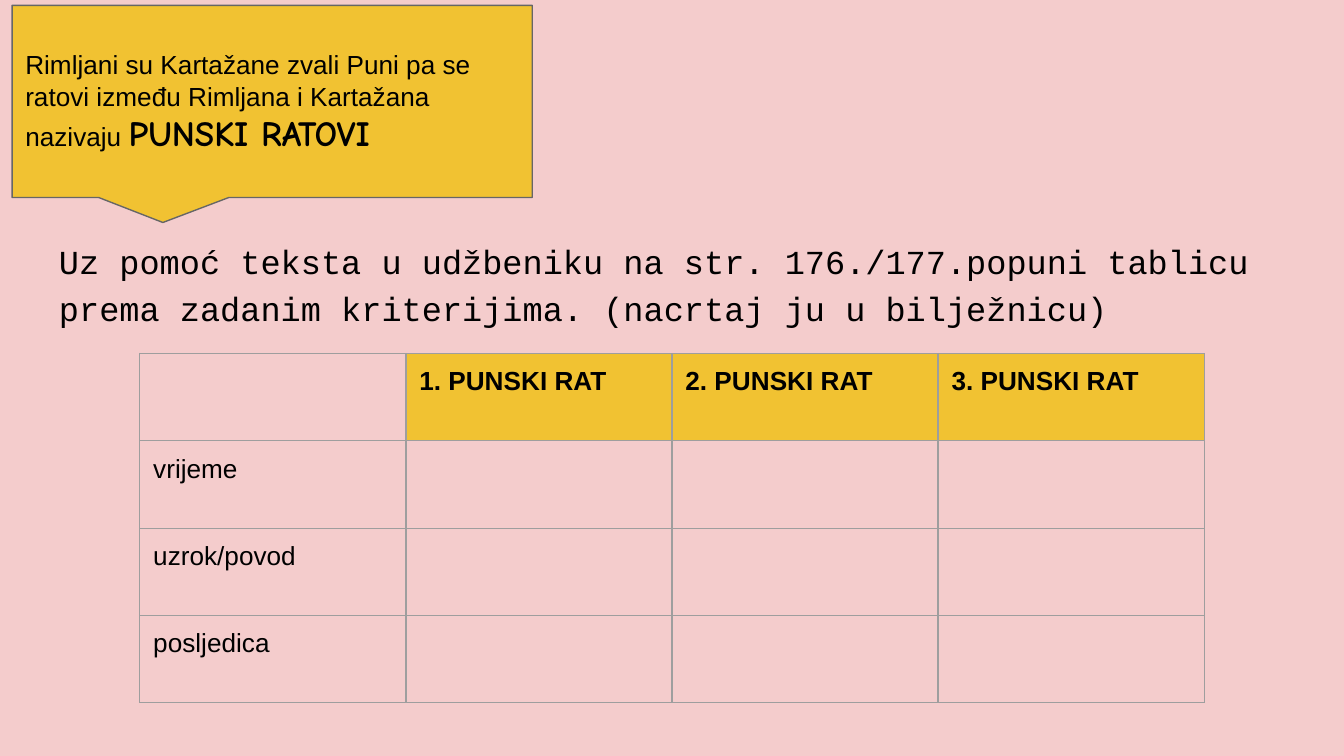
from lxml import etree
from pptx import Presentation
from pptx.dml.color import RGBColor
from pptx.enum.shapes import MSO_SHAPE
from pptx.enum.text import MSO_ANCHOR, PP_ALIGN
from pptx.oxml.ns import qn
from pptx.util import Inches, Pt

CALLOUT = MSO_SHAPE.ROUNDED_RECTANGULAR_CALLOUT
TOP, MIDDLE = MSO_ANCHOR.TOP, MSO_ANCHOR.MIDDLE
LEFT = PP_ALIGN.LEFT

PINK, GOLD, GREY, EDGE, BLACK = "F4CCCC", "F1C232", "666666", "9E9E9E", "000000"
PLAIN = {"name": "Arial", "size": Pt(14), "bold": False}
BOLD = {**PLAIN, "bold": True}
COMIC = {"name": "Comic Neue", "size": Pt(19), "bold": True}
MONO = {"name": "Courier New", "size": Pt(18), "bold": False}

TASK = [("Uz pomoć teksta u udžbeniku na str. 176./177.popuni tablicu "
         "prema zadanim kriterijima. (nacrtaj ju u bilježnicu)", MONO)]
NOTE = [("Rimljani su Kartažane zvali Puni pa se ratovi između Rimljana "
         "i Kartažana nazivaju ", PLAIN), ("PUNSKI RATOVI", COMIC)]
WARS = ["1. PUNSKI RAT", "2. PUNSKI RAT", "3. PUNSKI RAT"]
TOPICS = ["vrijeme", "uzrok/povod", "posljedica"]
GRID = [["", *WARS]] + [[topic, "", "", ""] for topic in TOPICS]

WIDTH = Inches(10)
HEIGHT = WIDTH * 9 // 16
TASK_BOX = (0.34, 1.65, 9.32, 4.17)
NOTE_BOX = (0.09, 0.04, 3.87, 1.43)
GRID_BOX = (1.04, 2.63, 7.92, 2.6)
POINTER = (-0.21, 0.63, 0)
PAD = Inches(0.1)


def color(code):
    return RGBColor.from_string(code)


def place(box):
    return [Inches(n) for n in box]


def paint(fill, code):
    fill.solid()
    fill.fore_color.rgb = color(code)


def pad(item):
    for side in ("left", "right", "top", "bottom"):
        setattr(item, f"margin_{side}", PAD)


def write(frame, runs, space=1.0):
    para = frame.paragraphs[0]
    para.alignment = LEFT
    para.line_spacing = space
    for text, style in runs:
        run = para.add_run()
        run.text = text
        for key, value in style.items():
            setattr(run.font, key, value)
        run.font.color.rgb = color(BLACK)


def fit(shape, runs, anchor, space=1.0):
    frame = shape.text_frame
    frame.word_wrap = True
    frame.vertical_anchor = anchor
    pad(frame)
    write(frame, runs, space)


def edge(cell):
    props = cell._tc.get_or_add_tcPr()
    for spot, side in enumerate("LRTB"):
        line = etree.Element(qn(f"a:ln{side}"), w=str(Pt(0.75)))
        solid = etree.SubElement(line, qn("a:solidFill"))
        etree.SubElement(solid, qn("a:srgbClr"), val=EDGE)
        props.insert(spot, line)


def add_task(slide):
    fit(slide.shapes.add_textbox(*place(TASK_BOX)), TASK, TOP, 1.15)


def add_note(slide):
    note = slide.shapes.add_shape(CALLOUT, *place(NOTE_BOX))
    for spot, value in enumerate(POINTER):
        note.adjustments[spot] = value
    note.shadow.inherit = False
    paint(note.fill, GOLD)
    note.line.color.rgb = color(GREY)
    note.line.width = Pt(0.75)
    fit(note, NOTE, MIDDLE)


def add_grid(slide):
    rows, cols = len(GRID), len(GRID[0])
    table = slide.shapes.add_table(rows, cols, *place(GRID_BOX)).table
    table.first_row = table.horz_banding = False
    for r, row in enumerate(GRID):
        for c, text in enumerate(row):
            cell = table.cell(r, c)
            pad(cell)
            if text in WARS:
                paint(cell.fill, GOLD)
            else:
                cell.fill.background()
            if text:
                write(cell.text_frame, [(text, PLAIN if r else BOLD)])
            edge(cell)


def main():
    deck = Presentation()
    deck.slide_width, deck.slide_height = WIDTH, HEIGHT
    slide = deck.slides.add_slide(deck.slide_layouts[6])
    paint(slide.background.fill, PINK)
    add_task(slide)
    add_note(slide)
    add_grid(slide)
    deck.save("out.pptx")


if __name__ == "__main__":
    main()
